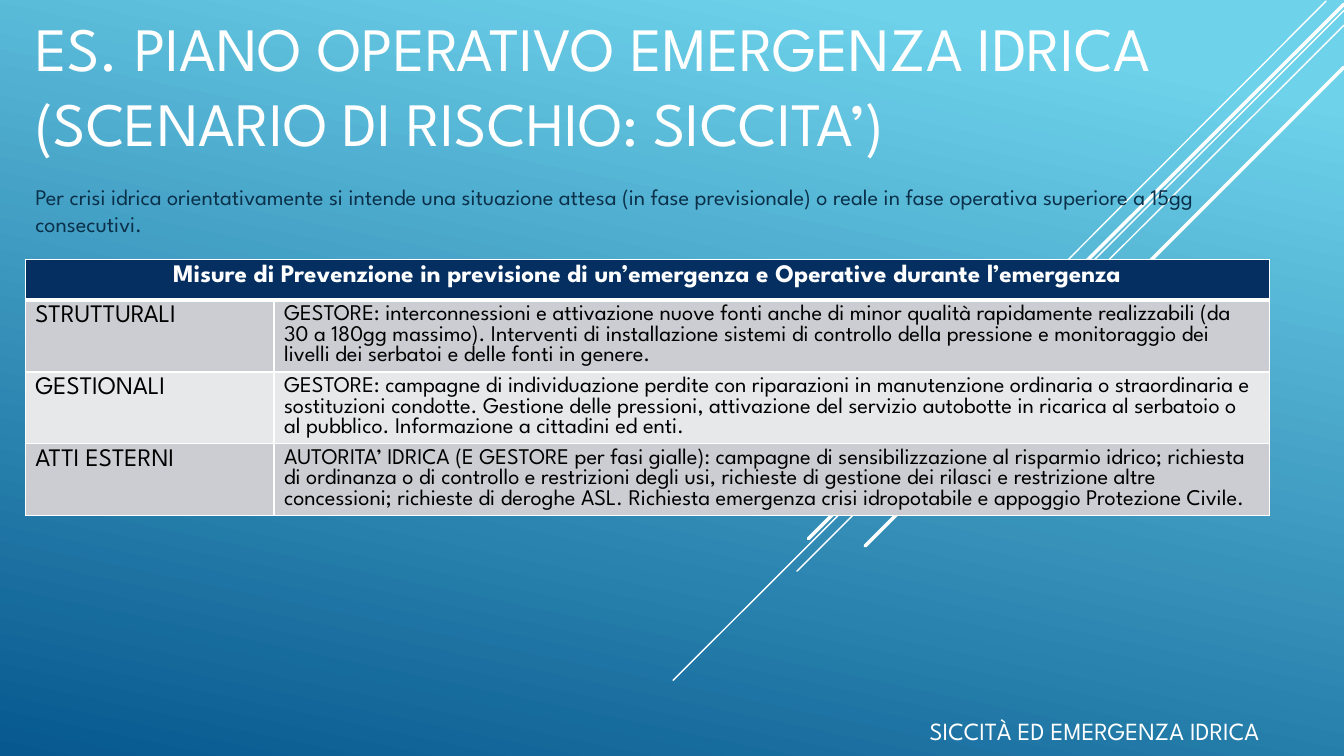
from lxml.etree import SubElement as Sub
from pptx import Presentation
from pptx.dml.color import RGBColor
from pptx.enum.shapes import MSO_CONNECTOR as Link
from pptx.enum.text import MSO_ANCHOR as Anchor, MSO_AUTO_SIZE as Fit, PP_ALIGN as Align
from pptx.oxml.ns import qn
from pptx.util import Emu, Pt

PX = 9525
WHITE = "FFFFFF"


def paint(color, code):
    color.rgb = RGBColor.from_string(code)


def write(frame, text, size, code, bold=False, align=Align.LEFT):
    par = frame.paragraphs[0]
    par.alignment = align
    run = par.add_run()
    run.text = text
    run.font.name = "League Spartan"
    run.font.size = Pt(size)
    run.font.bold = bold
    paint(run.font.color, code)
    return par


deck = Presentation()
deck.slide_width, deck.slide_height = Emu(1280 * PX), Emu(720 * PX)
slide = deck.slides.add_slide(deck.slide_layouts[0])
shapes = slide.shapes

back = slide.background.fill
back.gradient()
back.gradient_angle = 258
for stop, place, code in zip(back.gradient_stops, (0.1, 1), ("6ED2EB", "06588E")):
    stop.position = place
    paint(stop.color, code)

rays = [
    (1263, 1, 864, 401, 1),
    (1280, 10, 641, 648, 1),
    (1280, 24, 759, 544, 1),
    (1280, 4, 770, 513, 2.5),
    (1280, 64, 824, 520, 2.5),
]
for i, (*ends, width) in enumerate(rays):
    ray = shapes.add_connector(Link.STRAIGHT, *[Emu(n * PX) for n in ends])
    paint(ray.line.color, WHITE)
    ray.line.width = Pt(width)
    ray.line._ln.set("cap", "rnd")
    Sub(ray.element.spPr, qn("a:effectLst"))
    shapes.element.insert(2 + i, ray.element)

title, body = slide.placeholders
foot = shapes.add_textbox(0, 0, 0, 0)
boxes = [
    (title, (24, 48, 1205, 108), Anchor.BOTTOM, 44, WHITE, 53.6, 0,
     "ES. PIANO OPERATIVO EMERGENZA IDRICA (SCENARIO DI RISCHIO: SICCITA’)"),
    (foot, (876, 668, 404, 47), Anchor.BOTTOM, 17.6, WHITE, None, 0,
     "SICCITÀ ED EMERGENZA IDRICA"),
    (body, (24, 169, 1228, 174), Anchor.TOP, 16, "0A304A", 19.3, 3,
     "Per crisi idrica orientativamente si intende una situazione attesa (in fase "
     "previsionale) o reale in fase operativa superiore a 15gg consecutivi."),
]
for box, area, anchor, size, code, gap, before, text in boxes:
    box.left, box.top, box.width, box.height = [Emu(n * PX) for n in area]
    frame = box.text_frame
    frame.word_wrap = True
    frame.auto_size = Fit.NONE
    frame.vertical_anchor = anchor
    par = write(frame, text, size, code)
    par.space_before = Pt(before)
    if gap:
        par.line_spacing = Pt(gap)

rows = [
    ("Misure di Prevenzione in previsione di un’emergenza e Operative durante l’emergenza", ""),
    ("STRUTTURALI",
     "GESTORE: interconnessioni e attivazione nuove fonti anche di minor qualità "
     "rapidamente realizzabili (da 30 a 180gg massimo). Interventi di installazione "
     "sistemi di controllo della pressione e monitoraggio dei livelli dei serbatoi e "
     "delle fonti in genere."),
    ("GESTIONALI",
     "GESTORE: campagne di individuazione perdite con riparazioni in manutenzione "
     "ordinaria o straordinaria e sostituzioni condotte. Gestione delle pressioni, "
     "attivazione del servizio autobotte in ricarica al serbatoio o al pubblico. "
     "Informazione a cittadini ed enti."),
    ("ATTI ESTERNI",
     "AUTORITA’ IDRICA (E GESTORE per fasi gialle): campagne di sensibilizzazione al "
     "risparmio idrico; richiesta di ordinanza o di controllo e restrizioni degli usi, "
     "richieste di gestione dei rilasci e restrizione altre concessioni; richieste di "
     "deroghe ASL. Richiesta emergenza crisi idropotabile e appoggio Protezione Civile."),
]
fills = ["052F61", "CCCDD2", "E7E8EA", "CCCDD2"]
area = [Emu(n * PX) for n in (24, 247, 1185, 156)]
table = shapes.add_table(4, 2, *area).table
for col, width in zip(table.columns, (237, 948)):
    col.width = Emu(width * PX)
table.cell(0, 0).merge(table.cell(0, 1))
for r, texts in enumerate(rows):
    head = r == 0
    for c, text in enumerate(texts):
        cell = table.cell(r, c)
        for side in "LRTB":
            thick = head and side == "B" or r == 1 and side == "T"
            edge = Sub(cell._tc.get_or_add_tcPr(), qn("a:ln" + side), w=str(Pt(3 if thick else 1)))
            Sub(Sub(edge, qn("a:solidFill")), qn("a:srgbClr"), val=WHITE)
        cell.fill.solid()
        paint(cell.fill.fore_color, fills[r])
        if text:
            write(cell.text_frame, text, 16 if c else 18, WHITE if head else "000000",
                  head, Align.CENTER if head else Align.LEFT)

deck.save("out.pptx")
